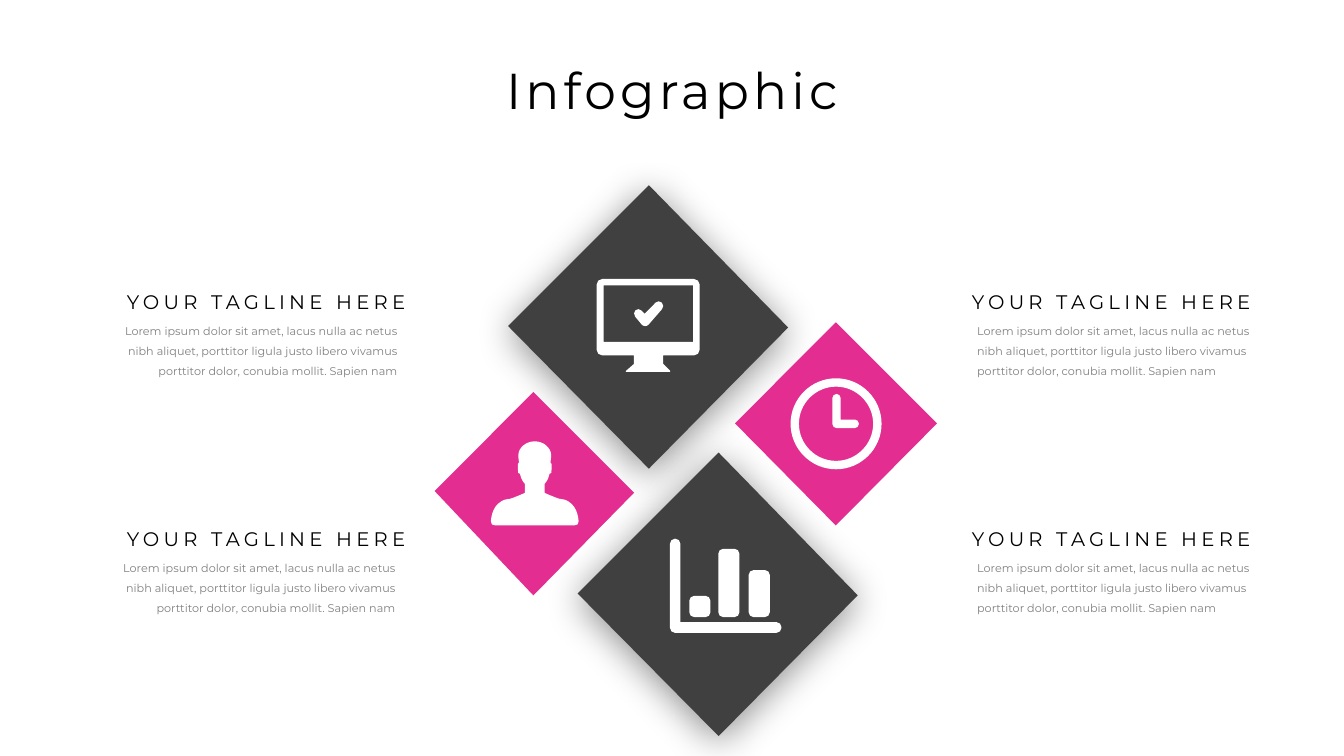
import math
from dataclasses import dataclass

import pptx
import pptx.dml.color
import pptx.enum.text
import pptx.oxml
import pptx.oxml.ns
import pptx.util
from pptx.util import Pt


@dataclass(frozen=True)
class Theme:
    font: str = "Montserrat"
    black: str = "000000"
    gray: str = "808080"
    dark: str = "404040"
    pink: str = "E32D91"
    white: str = "FFFFFF"
    title_size: int = 36
    tagline_size: int = 14
    body_size: int = 8
    tracking: int = 3


THEME = Theme()
ALIGN = pptx.enum.text.PP_ALIGN
ROUNDNESS = 0.55  # control distance that makes a cubic follow a quarter circle
TAGLINE = "YOUR TAGLINE HERE"
BODY = ("Lorem ipsum dolor sit amet, lacus nulla ac netus nibh aliquet, "
        "porttitor ligula justo libero vivamus porttitor dolor, "
        "conubia mollit. Sapien nam")

# Left edges of body and tagline, top of tagline, alignment
TEXT_BLOCKS = [
    (690.9, 687.2, 203.5, ALIGN.LEFT),
    (690.9, 687.2, 372.7, ALIGN.LEFT),
    (77.5, 81.4, 203.5, ALIGN.RIGHT),
    (76.1, 81.4, 372.7, ALIGN.RIGHT),
]

# Corners: top, left, bottom, right
DARK_DIAMONDS = [
    [(463.5, 132.3), (362.9, 232.9), (463.5, 334.8), (563, 234)],
    [(513.3, 323.3), (412.6, 424), (513.3, 525.8), (612.7, 425.3)],
]
PINK_DIAMONDS = [
    [(597, 230.2), (525, 302.4), (597, 375.3), (669.3, 302.4)],
    [(381, 280), (310.5, 350.8), (381, 425.3), (452.9, 352)],
]


def between(start, end, share):
    return tuple(a + (b - a) * share for a, b in zip(start[:2], end[:2]))


def polygon(corners):
    """A contour is a list of segments: one point is a line, three a cubic."""
    return [[corner] for corner in corners]


def rounded(corners):
    """Turn (x, y, radius) corners into a contour with rounded corners."""
    contour = []
    for index, corner in enumerate(corners):
        *point, radius = corner
        if not radius:
            contour.append([point])
            continue
        entry, leave = (
            between(corner, other, min(0.5, radius / math.dist(point, other[:2])))
            for other in (corners[index - 1], corners[(index + 1) % len(corners)]))
        contour += [[entry], [between(entry, point, ROUNDNESS),
                              between(leave, point, ROUNDNESS), leave]]
    return contour


def box(left, top, right, bottom, radius):
    return rounded([(left, top, radius), (right, top, radius),
                    (right, bottom, radius), (left, bottom, radius)])


def circle(x, y, radius):
    compass = [(0, -1), (1, 0), (0, 1), (-1, 0)]
    contour = [[(x, y - radius)]]
    for (ax, ay), (bx, by) in zip(compass, compass[1:] + compass[:1]):
        directions = [(ax + ROUNDNESS * bx, ay + ROUNDNESS * by),
                      (bx + ROUNDNESS * ax, by + ROUNDNESS * ay), (bx, by)]
        contour.append([(x + radius * dx, y + radius * dy) for dx, dy in directions])
    return contour


def monitor_icon():
    frame = rounded([
        (426.2, 199.3, 4), (499.8, 199.3, 4), (499.8, 253.9, 4), (473.8, 253.9, 0),
        (473.8, 260, 0), (478.8, 265, 0), (478.8, 265.7, 0), (447.1, 265.7, 0),
        (447.1, 265, 0), (452.9, 260, 0), (452.9, 253.9, 0), (426.2, 253.9, 4)])
    check = rounded([(456, 219.6, 3), (460.5, 224.2, 0), (470.5, 214, 3),
                     (475, 218.5, 3), (460.8, 234.8, 4), (451.8, 223.8, 3)])
    return [frame, box(431.3, 203.8, 495.2, 244.2, 0), check]


def chart_icon():
    axes = rounded([(478.6, 384.8, 3.5), (486, 384.8, 3.5), (486, 444.4, 0),
                    (558.2, 444.4, 3.5), (558.2, 452, 3.5), (478.6, 452, 3.5)])
    bars = [box(left, top, left + 15.1, 440.8, 3.5)
            for left, top in [(534.8, 407.2), (513.1, 392), (492.4, 425.6)]]
    return [axes, *bars]


def clock_icon():
    hands = rounded([(594.6, 281.4, 2.9), (600.5, 281.4, 2.9), (600.5, 299.7, 0),
                     (613.5, 299.7, 2.9), (613.5, 305.8, 2.9), (594.6, 305.8, 2.9)])
    return [circle(597.2, 302.7, 32.5), circle(597.2, 302.7, 26.5), hands]


def person_icon():
    """Left half as cubics from head to base, mirrored about the middle."""
    middle = 382
    half = [
        (0, 315.2),
        (-6.5, 315.2), (-11.5, 320), (-11.7, 324.7),
        (-11.7, 325.6), (-11.7, 328.5), (-11.2, 330.5),
        (-12.6, 330.5), (-12, 334), (-12, 335.5),
        (-12, 337), (-12, 339), (-10.6, 338.4),
        (-9.6, 343.4), (-7, 345.6), (-7, 345.6),
        (-7, 352), (-7, 352), (-7, 352),
        (-7, 352), (-8.5, 352.8), (-14.6, 355.2),
        (-20.5, 357.6), (-19, 355.5), (-23.8, 358),
        (-31.3, 362.2), (-31.3, 372.4), (-31.3, 372.4),
        (-31.3, 374.4), (-30.4, 375.2), (-28.6, 375.2),
    ]
    left = [(middle + x, y) for x, y in half]
    right = [(middle - x, y) for x, y in reversed(half)]
    contour = []
    for side in (left, right):
        contour.append(side[:1])
        contour += [side[index:index + 3] for index in range(1, len(side), 3)]
    return [contour]


def add_outline(slide, contours, color):
    """Draw closed contours as one shape; inner contours become holes."""
    builder = None
    for contour in contours:
        start, *points = [(Pt(x), Pt(y)) for segment in contour for x, y in segment]
        if builder is None:
            builder = slide.shapes.build_freeform(*start)
        else:
            builder.move_to(*start)
        builder.add_line_segments(points)
    shape = builder.convert_to_shape()
    bend_segments(shape, [segment for contour in contours for segment in contour[1:]])
    shape.shadow.inherit = False
    shape.fill.solid()
    shape.fill.fore_color.rgb = pptx.dml.color.RGBColor.from_string(color)
    shape.line.fill.background()
    return shape


def bend_segments(shape, segments):
    """Join each run of three lines that stands for a cubic into one curve."""
    lines = iter(list(shape._element.iter(pptx.oxml.ns.qn("a:lnTo"))))
    for segment in segments:
        first, *others = [next(lines) for point in segment]
        if others:
            first.tag = pptx.oxml.ns.qn("a:cubicBezTo")
        for line in others:
            first.append(line[0])
            line.getparent().remove(line)


def add_soft_shadow(shape):
    effects = shape._element.spPr.find(pptx.oxml.ns.qn("a:effectLst"))
    effects.append(pptx.oxml.parse_xml(
        f'<a:outerShdw {pptx.oxml.ns.nsdecls("a")} blurRad="{Pt(27)}" '
        f'dist="{Pt(4)}" dir="5400000" algn="t" rotWithShape="0">'
        f'<a:srgbClr val="{THEME.black}"><a:alpha val="43000"/></a:srgbClr>'
        '</a:outerShdw>'))


def add_text(slide, frame, text, size, color, align, tracking=0, spacing=None):
    """Add one paragraph; tracked text stays on a single line."""
    text_box = slide.shapes.add_textbox(*map(Pt, frame))
    text_frame = text_box.text_frame
    text_frame.word_wrap = not tracking
    text_frame.auto_size = pptx.enum.text.MSO_AUTO_SIZE.SHAPE_TO_FIT_TEXT
    paragraph = text_frame.paragraphs[0]
    paragraph.alignment = align
    if spacing:
        paragraph.line_spacing = spacing
    run = paragraph.add_run()
    run.text = text
    run.font.name = THEME.font
    run.font.size = Pt(size)
    run.font.color.rgb = pptx.dml.color.RGBColor.from_string(color)
    if tracking:
        run._r.get_or_add_rPr().set("spc", str(tracking * 100))


def main():
    presentation = pptx.Presentation()
    presentation.slide_width, presentation.slide_height = Pt(960), Pt(540)
    slide = presentation.slides.add_slide(presentation.slide_layouts[6])
    for corners in DARK_DIAMONDS:
        add_soft_shadow(add_outline(slide, [polygon(corners)], THEME.dark))
    for corners in PINK_DIAMONDS:
        add_outline(slide, [polygon(corners)], THEME.pink)
    for icon in (person_icon, clock_icon, chart_icon, monitor_icon):
        add_outline(slide, icon(), THEME.white)
    for body_left, tagline_left, top, align in TEXT_BLOCKS:
        add_text(slide, (body_left, top + 19.7, 213.8, 51.1), BODY,
                 THEME.body_size, THEME.gray, align, spacing=1.5)
        add_text(slide, (tagline_left, top, 215.3, 24.5), TAGLINE,
                 THEME.tagline_size, THEME.black, align, THEME.tracking)
    add_text(slide, (352.6, 38.9, 254.9, 51.1), "Infographic",
             THEME.title_size, THEME.black, ALIGN.CENTER, THEME.tracking)
    presentation.save("out.pptx")


if __name__ == "__main__":
    main()
